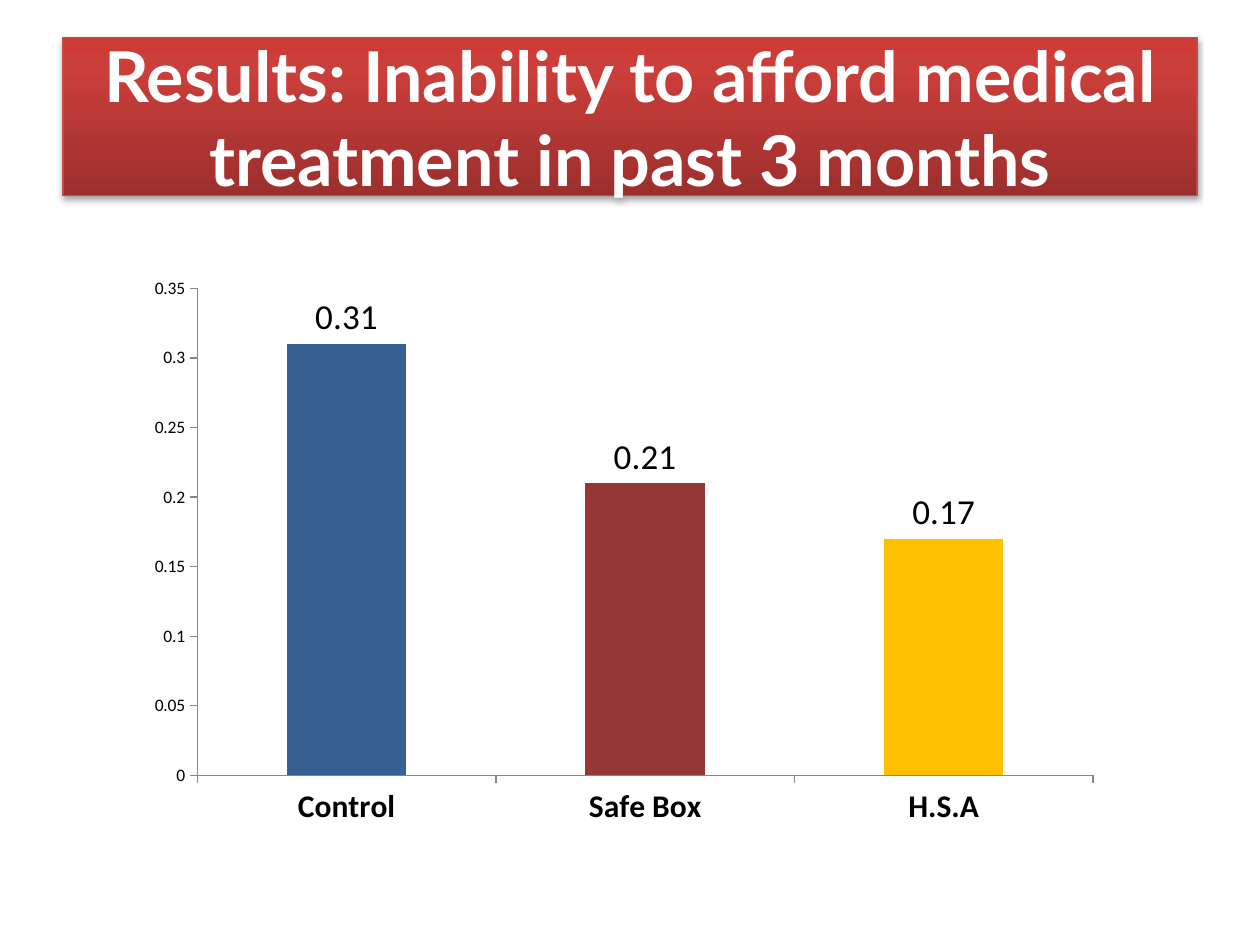
from copy import deepcopy

from lxml import etree
from pptx import Presentation
from pptx.chart.data import CategoryChartData
from pptx.dml.color import RGBColor
from pptx.enum.chart import XL_CHART_TYPE, XL_LABEL_POSITION, XL_TICK_MARK
from pptx.enum.text import MSO_ANCHOR, MSO_AUTO_SIZE, PP_ALIGN
from pptx.oxml import parse_xml
from pptx.oxml.ns import nsdecls, qn
from pptx.util import Inches, Pt

COLUMNS = XL_CHART_TYPE.COLUMN_CLUSTERED
ABOVE = XL_LABEL_POSITION.OUTSIDE_END
OUTSIDE = XL_TICK_MARK.OUTSIDE
MIDDLE = MSO_ANCHOR.MIDDLE
NO_FIT = MSO_AUTO_SIZE.NONE
CENTER = PP_ALIGN.CENTER

WHITE = RGBColor(0xFF, 0xFF, 0xFF)
BLACK = RGBColor(0, 0, 0)
GRAY = RGBColor(0x86, 0x86, 0x86)
BLUE = RGBColor(0x37, 0x60, 0x92)
MAROON = RGBColor(0x95, 0x37, 0x35)
GOLD = RGBColor(0xFF, 0xC0, 0x00)
EDGE = RGBColor(0xBF, 0x4C, 0x48)
REDS = [
    (0, RGBColor(0x9C, 0x2F, 0x2D)),
    (0.8, RGBColor(0xCB, 0x3E, 0x3A)),
    (1, RGBColor(0xCE, 0x3B, 0x37)),
]

SHADOW = (
    f'<a:effectLst {nsdecls("a")}>'
    '<a:outerShdw blurRad="40000" dist="23000" dir="5400000" rotWithShape="0">'
    '<a:srgbClr val="000000"><a:alpha val="35000"/></a:srgbClr>'
    '</a:outerShdw></a:effectLst>'
)


def apply(target, values):
    for name, value in values.items():
        setattr(target, name, value)


class Deck:
    """Holds the style and the current slide; places are shares of its size."""

    title_font = {"name": "Lato", "size": Pt(40), "bold": True}
    chart_font = {"name": "Calibri", "size": Pt(10)}
    cat_font = {"size": Pt(18), "bold": True}
    label_font = {"size": Pt(20)}

    def __init__(self, width, height):
        self.prs = Presentation()
        self.wide, self.high = Inches(width), Inches(height)
        apply(self.prs, {"slide_width": self.wide, "slide_height": self.high})
        self.slide = self.prs.slides.add_slide(self.prs.slide_layouts[5])

    def place(self, left, top, width, height):
        return {
            "left": int(left * self.wide),
            "top": int(top * self.high),
            "width": int(width * self.wide),
            "height": int(height * self.high),
        }

    def title(self, text, box):
        shape = self.slide.shapes.title
        apply(shape, self.place(*box))
        self.shade(shape.fill, shape._element.spPr)
        shape.line.color.rgb = EDGE
        shape.line.width = Pt(0.75)
        shape._element.spPr.append(parse_xml(SHADOW))
        frame = shape.text_frame
        frame.text = text
        apply(frame, {"vertical_anchor": MIDDLE, "auto_size": NO_FIT,
                      "word_wrap": True})
        line = frame.paragraphs[0]
        line.alignment = CENTER
        font = line.runs[0].font
        apply(font, self.title_font)
        font.color.rgb = WHITE

    def shade(self, fill, props):
        fill.gradient()
        fill.gradient_angle = 90
        stops = props.find(f'{qn("a:gradFill")}/{qn("a:gsLst")}')
        stops.append(deepcopy(stops[-1]))
        for stop, (share, color) in zip(fill.gradient_stops, REDS):
            stop.position = share
            stop.color.rgb = color

    def chart(self, bars, box, plot_box):
        data = CategoryChartData()
        data.categories = [name for name, _, _ in bars]
        data.add_series("Series 1", [value for _, value, _ in bars])
        frame = self.slide.shapes.add_chart(
            COLUMNS, **self.swap(self.place(*box)), chart_data=data)
        chart = frame.chart
        apply(chart, {"has_legend": False, "has_title": False})
        apply(chart.font, self.chart_font)
        chart.font.color.rgb = BLACK
        self.axes(chart)
        self.bars(chart.plots[0], [color for _, _, color in bars])
        self.inner(chart, plot_box)

    def swap(self, box):
        """Rename a place to the argument names of add_chart."""
        return dict(zip(("x", "y", "cx", "cy"), box.values()))

    def axes(self, chart):
        for axis in (chart.category_axis, chart.value_axis):
            apply(axis, {"has_major_gridlines": False,
                         "major_tick_mark": OUTSIDE})
            axis.format.line.color.rgb = GRAY
        apply(chart.category_axis.tick_labels.font, self.cat_font)
        apply(chart.value_axis, {"minimum_scale": 0, "maximum_scale": 0.35,
                                 "major_unit": 0.05})

    def bars(self, plot, colors):
        apply(plot, {"gap_width": 150, "vary_by_categories": False,
                     "has_data_labels": True})
        apply(plot.data_labels, {"show_value": True, "position": ABOVE})
        apply(plot.data_labels.font, self.label_font)
        for index, color in enumerate(colors):
            fill = plot.series[0].points[index].format.fill
            fill.solid()
            fill.fore_color.rgb = color

    def inner(self, chart, box):
        """Fix the inner plot area as shares of the chart."""
        area = chart._chartSpace.chart.plotArea
        for old in area.findall(qn("c:layout")):
            area.remove(old)
        layout = etree.Element(qn("c:layout"))
        area.insert(0, layout)
        manual = etree.SubElement(layout, qn("c:manualLayout"))
        values = {"layoutTarget": "inner", "xMode": "edge", "yMode": "edge"}
        values.update(zip("xywh", box))
        for name, value in values.items():
            etree.SubElement(manual, qn(f"c:{name}")).set("val", str(value))


def main():
    deck = Deck(10, 7.5)
    deck.title("Results: Inability to afford medical treatment in past 3 months",
               (0.05, 0.04, 0.9, 1 / 6))
    bars = [("Control", 0.31, BLUE), ("Safe Box", 0.21, MAROON),
            ("H.S.A", 0.17, GOLD)]
    deck.chart(bars, (0.075, 2 / 7.5, 0.817, 4.83 / 7.5),
               (0.1, 0.06, 0.87, 0.8))
    deck.prs.save("out.pptx")


if __name__ == "__main__":
    main()
